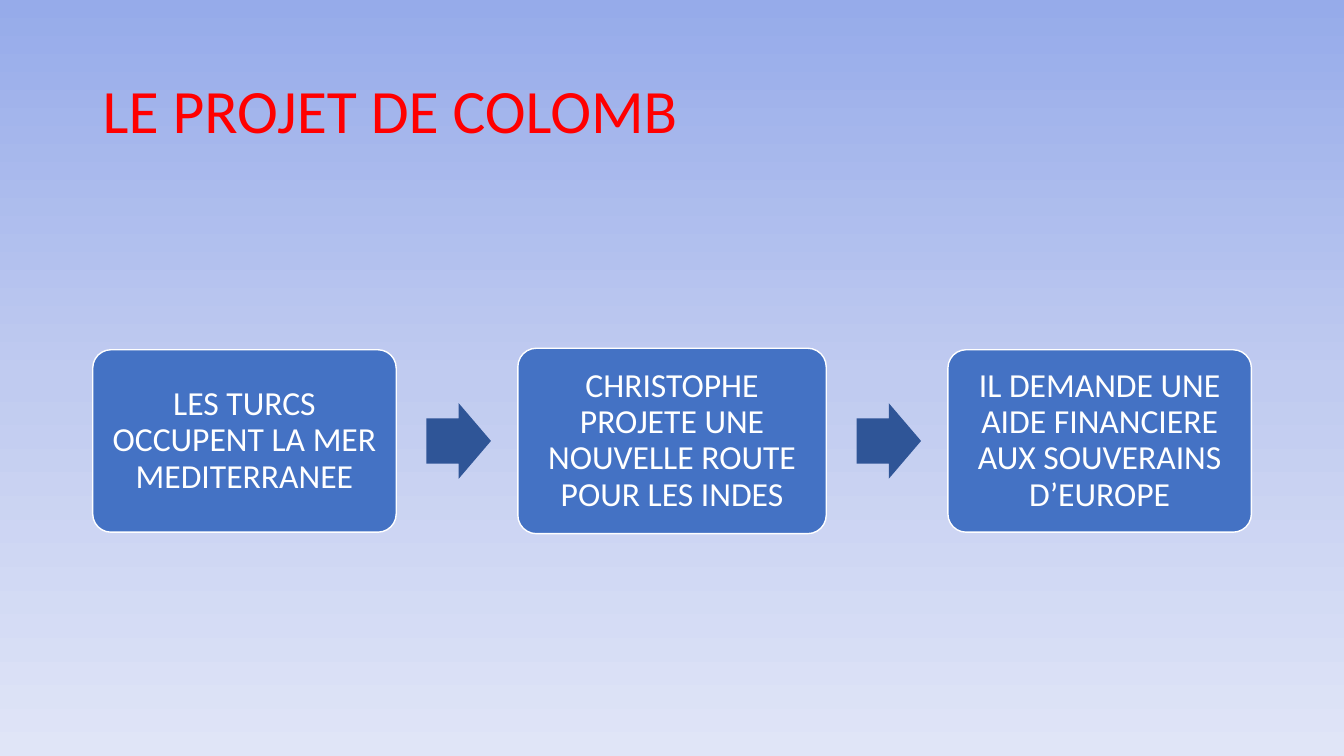
import copy

import pptx
import pptx.dml.color
import pptx.enum.shapes
import pptx.enum.text
import pptx.oxml.ns
import pptx.util

RED = pptx.dml.color.RGBColor(0xFF, 0x00, 0x00)
WHITE = pptx.dml.color.RGBColor(0xFF, 0xFF, 0xFF)
BOX_BLUE = pptx.dml.color.RGBColor(0x44, 0x72, 0xC4)
ARROW_BLUE = pptx.dml.color.RGBColor(0x2F, 0x55, 0x97)
SKY_TOP = pptx.dml.color.RGBColor(0x96, 0xAB, 0xEA)
SKY_MIDDLE = pptx.dml.color.RGBColor(0xC0, 0xCB, 0xF0)
SKY_BOTTOM = pptx.dml.color.RGBColor(0xE0, 0xE5, 0xF7)

WIDTH = pptx.util.Inches(13.33)
HEIGHT = pptx.util.Inches(7.5)
COLUMN = WIDTH / 100
ROW = HEIGHT / 100

LEFT_MARGIN = 6.9
FLOW_MIDDLE = 58.33
ARROW_WIDTH = 4.8
ARROW_HEIGHT = 10
GAP_BEFORE_ARROW = 2.25
GAP_AFTER_ARROW = 2

STEPS = [
    ("LES TURCS OCCUPENT LA MER MEDITERRANEE", 22.58, 24.13),
    ("CHRISTOPHE PROJETE UNE NOUVELLE ROUTE POUR LES INDES", 22.95, 24.53),
    ("IL DEMANDE UNE AIDE FINANCIERE AUX SOUVERAINS D’EUROPE", 22.58, 24.13),
]


def grid(left, top, width, height):
    return (round(left * COLUMN), round(top * ROW),
            round(width * COLUMN), round(height * ROW))


def paint_background(slide):
    fill = slide.background.fill
    fill.gradient()
    fill.gradient_angle = 270
    stop_list = next(slide.element.iter(pptx.oxml.ns.qn("a:gsLst")))
    stop_list.insert(1, copy.deepcopy(stop_list[0]))
    colours = (SKY_TOP, SKY_MIDDLE, SKY_BOTTOM)
    for stop, position, colour in zip(fill.gradient_stops, (0, 0.5, 1), colours):
        stop.position = position
        stop.color.rgb = colour


def write(shape, text, size, colour, alignment):
    frame = shape.text_frame
    frame.word_wrap = True
    frame.vertical_anchor = pptx.enum.text.MSO_ANCHOR.MIDDLE
    paragraph = frame.paragraphs[0]
    paragraph.alignment = alignment
    paragraph.line_spacing = 0.9
    run = paragraph.add_run()
    run.text = text
    run.font.name = "Calibri"
    run.font.size = pptx.util.Pt(size)
    run.font.color.rgb = colour


def add_title(slide, text):
    title = slide.shapes.add_textbox(*grid(LEFT_MARGIN, 5.33, 86.25, 19.33))
    write(title, text, 44, RED, pptx.enum.text.PP_ALIGN.LEFT)


def add_flow_shape(slide, kind, left, width, height, colour, adjustments):
    top = FLOW_MIDDLE - height / 2
    shape = slide.shapes.add_shape(kind, *grid(left, top, width, height))
    shape.shadow.inherit = False
    shape.fill.solid()
    shape.fill.fore_color.rgb = colour
    shape.line.fill.background()
    for index, value in enumerate(adjustments):
        shape.adjustments[index] = value
    return shape


def add_step(slide, text, left, width, height):
    box = add_flow_shape(slide, pptx.enum.shapes.MSO_SHAPE.ROUNDED_RECTANGLE,
                         left, width, height, BOX_BLUE, [0.1])
    box.line.color.rgb = WHITE
    box.line.width = pptx.util.Pt(1)
    frame = box.text_frame
    inset = pptx.util.Inches(0.1)
    frame.margin_left = frame.margin_right = inset
    frame.margin_top = frame.margin_bottom = inset
    write(box, text, 24, WHITE, pptx.enum.text.PP_ALIGN.CENTER)


def add_arrow(slide, left):
    add_flow_shape(slide, pptx.enum.shapes.MSO_SHAPE.RIGHT_ARROW, left,
                   ARROW_WIDTH, ARROW_HEIGHT, ARROW_BLUE, [0.6, 0.5])


def add_flow(slide, steps):
    left = LEFT_MARGIN
    for index, (text, width, height) in enumerate(steps):
        if index:
            left += GAP_BEFORE_ARROW
            add_arrow(slide, left)
            left += ARROW_WIDTH + GAP_AFTER_ARROW
        add_step(slide, text, left, width, height)
        left += width


def main():
    presentation = pptx.Presentation()
    presentation.slide_width = WIDTH
    presentation.slide_height = HEIGHT
    slide = presentation.slides.add_slide(presentation.slide_layouts[6])
    paint_background(slide)
    add_title(slide, "LE PROJET DE COLOMB")
    add_flow(slide, STEPS)
    presentation.save("out.pptx")


if __name__ == "__main__":
    main()
